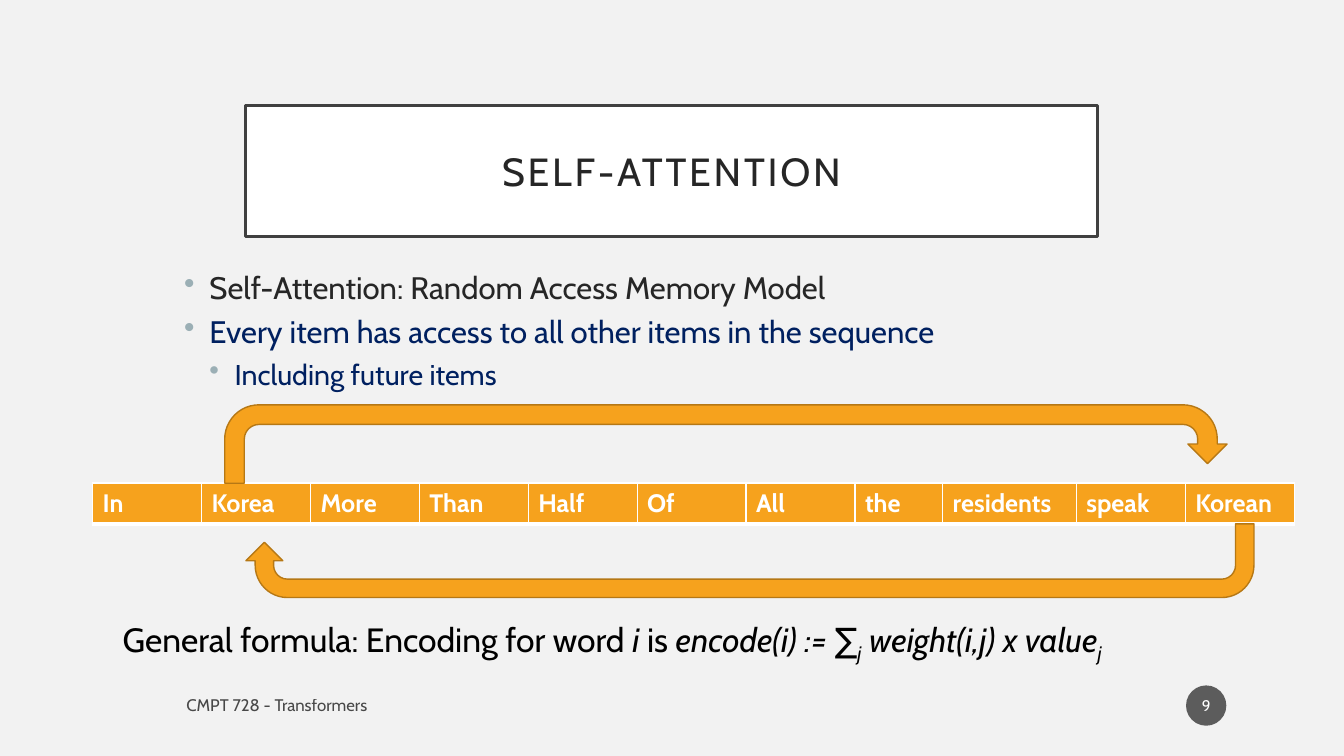
import pptx
import pptx.dml.color
import pptx.enum.shapes
import pptx.enum.text
import pptx.oxml
import pptx.oxml.ns
import pptx.util

Pt = pptx.util.Pt
Form = pptx.enum.shapes.MSO_SHAPE
Align = pptx.enum.text.PP_ALIGN
Anchor = pptx.enum.text.MSO_ANCHOR
NS = pptx.oxml.ns.nsdecls("a")

ORANGE, BROWN, WHITE, INK, NAVY = "F6A21D", "B67815", "FFFFFF", "262626", "002060"


def rgb(code):
    return pptx.dml.color.RGBColor.from_string(code)


def fade(fill, percent):
    """Make a solid fill partly transparent."""
    tone = fill._xPr.find(".//" + pptx.oxml.ns.qn("a:srgbClr"))
    tone.append(pptx.oxml.parse_xml(f'<a:alpha {NS} val="{percent * 1000}"/>'))


class Deck:
    def __init__(self, back, face):
        self.face = face
        self.show = pptx.Presentation()
        self.show.slide_width, self.show.slide_height = Pt(960), Pt(540)
        self.slide = self.show.slides.add_slide(self.show.slide_layouts[6])
        self.slide.background.fill.solid()
        self.slide.background.fill.fore_color.rgb = rgb(back)

    def font(self, para, size, color, bold=None):
        font = para.font
        font.name, font.size, font.bold = self.face, Pt(size), bold
        font.fill.solid()
        font.fill.fore_color.rgb = rgb(color)
        return font

    def shape(self, form, box, fill, line=None, width=1):
        item = self.slide.shapes.add_shape(form, *map(Pt, box))
        item.shadow.inherit = False
        item.fill.solid()
        item.fill.fore_color.rgb = rgb(fill)
        if line:
            item.line.color.rgb = rgb(line)
            item.line.width = Pt(width)
        else:
            item.line.fill.background()
        return item

    def label(self, item, text, size, color, inset):
        """Write centred text inside a shape and return its run."""
        frame = item.text_frame
        frame.word_wrap = True
        frame.vertical_anchor = Anchor.MIDDLE
        frame.margin_left = frame.margin_right = Pt(inset)
        para = frame.paragraphs[0]
        para.alignment = Align.CENTER
        run = para.add_run()
        run.text = text
        self.font(para, size, color)
        return run

    def frame(self, box):
        frame = self.slide.shapes.add_textbox(*map(Pt, box)).text_frame
        frame.word_wrap = True
        return frame

    def bullets(self, box, items):
        frame = self.frame(box)
        for n, (text, level, size, color) in enumerate(items):
            para = frame.add_paragraph() if n else frame.paragraphs[0]
            para.text, para.level = text, level
            para.line_spacing, para.space_before = 0.8, Pt(10)
            props = para._p.get_or_add_pPr()
            props.set("marL", str(Pt(18 * (level + 1))))
            props.set("indent", str(Pt(-18)))
            for mark in (f'<a:buClr {NS}><a:srgbClr val="9BAFB5"/></a:buClr>',
                         f'<a:buChar {NS} char="•"/>'):
                props.append(pptx.oxml.parse_xml(mark))
            self.font(para, size, color)

    def line(self, box, parts, size, color):
        """Write one line from (text, italic, baseline) parts."""
        frame = self.frame(box)
        para = frame.paragraphs[0]
        for text, slant, base in parts:
            run = para.add_run()
            run.text = text
            if slant:
                run.font.italic = True
            if base:
                run.font._element.set("baseline", str(base * 1000))
        return frame, self.font(para, size, color)

    def table(self, box, words, widths):
        grid = self.slide.shapes.add_table(1, len(words), *map(Pt, box)).table
        for n, (word, width) in enumerate(zip(words, widths)):
            grid.columns[n].width = Pt(width)
            cell = grid.cell(0, n)
            cell.text = word
            cell.fill.solid()
            cell.fill.fore_color.rgb = rgb(ORANGE)
            self.font(cell.text_frame.paragraphs[0], 18, WHITE, True)
            self.edge(cell)

    def edge(self, cell):
        """Draw thin white borders, with a thick one below."""
        props = cell._tc.get_or_add_tcPr()
        for n, (side, width) in enumerate(zip("LRTB", (1, 1, 1, 3))):
            props.insert(n, pptx.oxml.parse_xml(
                f'<a:ln{side} {NS} w="{Pt(width)}"><a:solidFill>'
                f'<a:srgbClr val="{WHITE}"/></a:solidFill></a:ln{side}>'))


def main():
    deck = Deck("F2F2F2", "Cabin")

    title = deck.shape(Form.RECTANGLE, (175.5, 75.5, 608.5, 93.5), WHITE, "404040", 2.5)
    run = deck.label(title, "SELF-ATTENTION", 28, INK, 14.4)
    run.font._element.set("spc", "200")

    deck.bullets((124.5, 193.5, 723, 94.5), [
        ("Self-Attention: Random Access Memory Model", 0, 22.2, INK),
        ("Every item has access to all other items in the sequence", 0, 22.2, NAVY),
        ("Including future items", 1, 20.4, NAVY),
    ])

    words = "In Korea More Than Half Of All the residents speak Korean".split()
    special = {"the": 62.7, "residents": 95.5}
    deck.table((66.2, 345, 858.2, 29.2), words, [special.get(w, 77.8) for w in words])

    frame, font = deck.line((126, 491, 464.5, 25.2),
                            [("CMPT 728 - Transformers", False, 0)], 12, "000000")
    frame.vertical_anchor = Anchor.MIDDLE
    fade(font.fill, 70)

    badge = deck.shape(Form.OVAL, (847.2, 489.6, 28.8, 28.8), "1D1D1D")
    fade(badge.fill, 70)
    deck.label(badge, "9", 11, WHITE, 1.4)

    deck.shape(Form.U_TURN_ARROW, (160.5, 289.2, 716, 56), ORANGE, BROWN)
    back = deck.shape(Form.U_TURN_ARROW, (175.7, 374.2, 720, 52.6), ORANGE, BROWN)
    back.rotation = 180

    deck.line((80.6, 438.5, 815, 65.5), [
        ("General formula: Encoding for word ", False, 0),
        ("i ", True, 0),
        ("is", False, 0),
        (" encode(i) := ∑", True, 0),
        ("j", True, -25),
        (" weight(i,j) x value", True, 0),
        ("j", True, -25),
    ], 24, "000000")

    deck.show.save("out.pptx")


if __name__ == "__main__":
    main()
